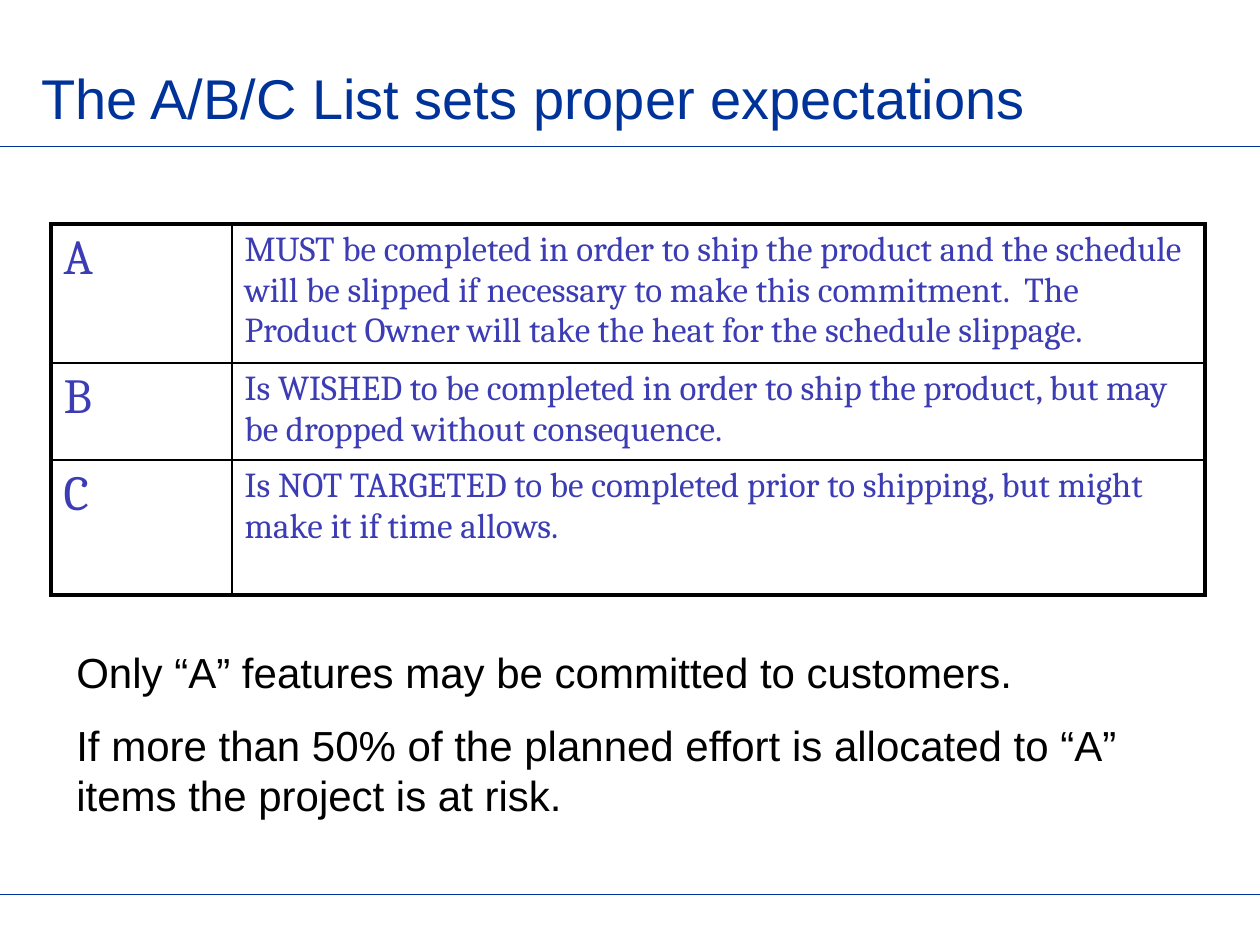
from lxml import etree
from pptx import Presentation
from pptx.dml.color import RGBColor
from pptx.enum.shapes import MSO_CONNECTOR
from pptx.enum.text import MSO_ANCHOR, PP_ALIGN
from pptx.oxml.ns import qn
from pptx.util import Emu, Pt

EMU_PER_PX = 914400 / 126
NAVY = RGBColor(0x00, 0x33, 0x99)
INDIGO = RGBColor(0x3C, 0x3C, 0xB4)
BLACK = RGBColor(0x00, 0x00, 0x00)

TITLE = "The A/B/C List sets proper expectations"
PRIORITIES = [
    ("A", "MUST be completed in order to ship the product and the schedule will be "
          "slipped if necessary to make this commitment.  The Product Owner will take "
          "the heat for the schedule slippage."),
    ("B", "Is WISHED to be completed in order to ship the product, but may be dropped "
          "without consequence."),
    ("C", "Is NOT TARGETED to be completed prior to shipping, but might make it if "
          "time allows."),
]
NOTES = [
    "Only “A” features may be committed to customers.",
    "If more than 50% of the planned effort is allocated to “A” items the project "
    "is at risk.",
]


def px(length):
    return Emu(round(length * EMU_PER_PX))


class SlideBuilder:
    HEADING_FONT = "Arial"
    TABLE_FONT = "Cambria"
    OUTER, INNER = Pt(2.25), Pt(1)

    def __init__(self, slide):
        self.slide = slide

    def add_text(self, paragraph, text, font, size, color):
        run = paragraph.add_run()
        run.text = text
        run.font.name = font
        run.font.size = Pt(size)
        run.font.color.rgb = color

    def rule(self, y):
        line = self.slide.shapes.add_connector(
            MSO_CONNECTOR.STRAIGHT, 0, px(y), px(1260), px(y))
        line.line.color.rgb = NAVY
        line.line.width = Pt(0.5)
        etree.SubElement(line._element.spPr, qn("a:effectLst"))

    def title(self, text, left, top, width, height):
        title = self.slide.shapes.title
        title.left, title.top = px(left), px(top)
        title.width, title.height = px(width), px(height)
        frame = title.text_frame
        frame.vertical_anchor = MSO_ANCHOR.BOTTOM
        paragraph = frame.paragraphs[0]
        paragraph.alignment = PP_ALIGN.LEFT
        self.add_text(paragraph, text, self.HEADING_FONT, 32, NAVY)

    def notes(self, lines, left, top, width, height):
        box = self.slide.shapes.add_textbox(px(left), px(top), px(width), px(height))
        frame = box.text_frame
        frame.word_wrap = True
        for index, text in enumerate(lines):
            paragraph = frame.add_paragraph() if index else frame.paragraphs[0]
            if index:
                paragraph.space_before = Pt(13)
            self.add_text(paragraph, text, self.HEADING_FONT, 24, BLACK)

    def borders(self, cell, widths):
        """Draw black borders, with widths in the order left, right, top, bottom."""
        properties = cell._tc.get_or_add_tcPr()
        for index, (side, width) in enumerate(zip("LRTB", widths)):
            border = etree.Element(qn(f"a:ln{side}"), w=str(int(width)))
            fill = etree.SubElement(border, qn("a:solidFill"))
            etree.SubElement(fill, qn("a:srgbClr"), val=str(BLACK))
            properties.insert(index, border)

    def table(self, rows, left, top, col_widths, row_heights):
        table = self.slide.shapes.add_table(
            len(rows), len(col_widths), px(left), px(top),
            px(sum(col_widths)), px(sum(row_heights))).table
        table.first_row = table.horz_banding = False
        for column, width in zip(table.columns, col_widths):
            column.width = px(width)
        for row, height in zip(table.rows, row_heights):
            row.height = px(height)
        last_row, last_col = len(rows) - 1, len(col_widths) - 1
        for r, values in enumerate(rows):
            for c, text in enumerate(values):
                cell = table.cell(r, c)
                cell.fill.background()
                on_edge = (c == 0, c == last_col, r == 0, r == last_row)
                self.borders(cell, [self.OUTER if edge else self.INNER for edge in on_edge])
                self.add_text(cell.text_frame.paragraphs[0], text, self.TABLE_FONT,
                              20 if c else 28, INDIGO)


def main():
    deck = Presentation()
    deck.slide_width, deck.slide_height = px(1260), px(945)
    title_only = deck.slide_layouts[5]
    builder = SlideBuilder(deck.slides.add_slide(title_only))
    for y in (146, 894):
        builder.rule(y)
    builder.title(TITLE, 29, 19, 1043, 118)
    builder.table(PRIORITIES, 51, 224, (181, 973), (139, 97, 135))
    builder.notes(NOTES, 64, 640, 1134, 190)
    deck.save("out.pptx")


if __name__ == "__main__":
    main()
